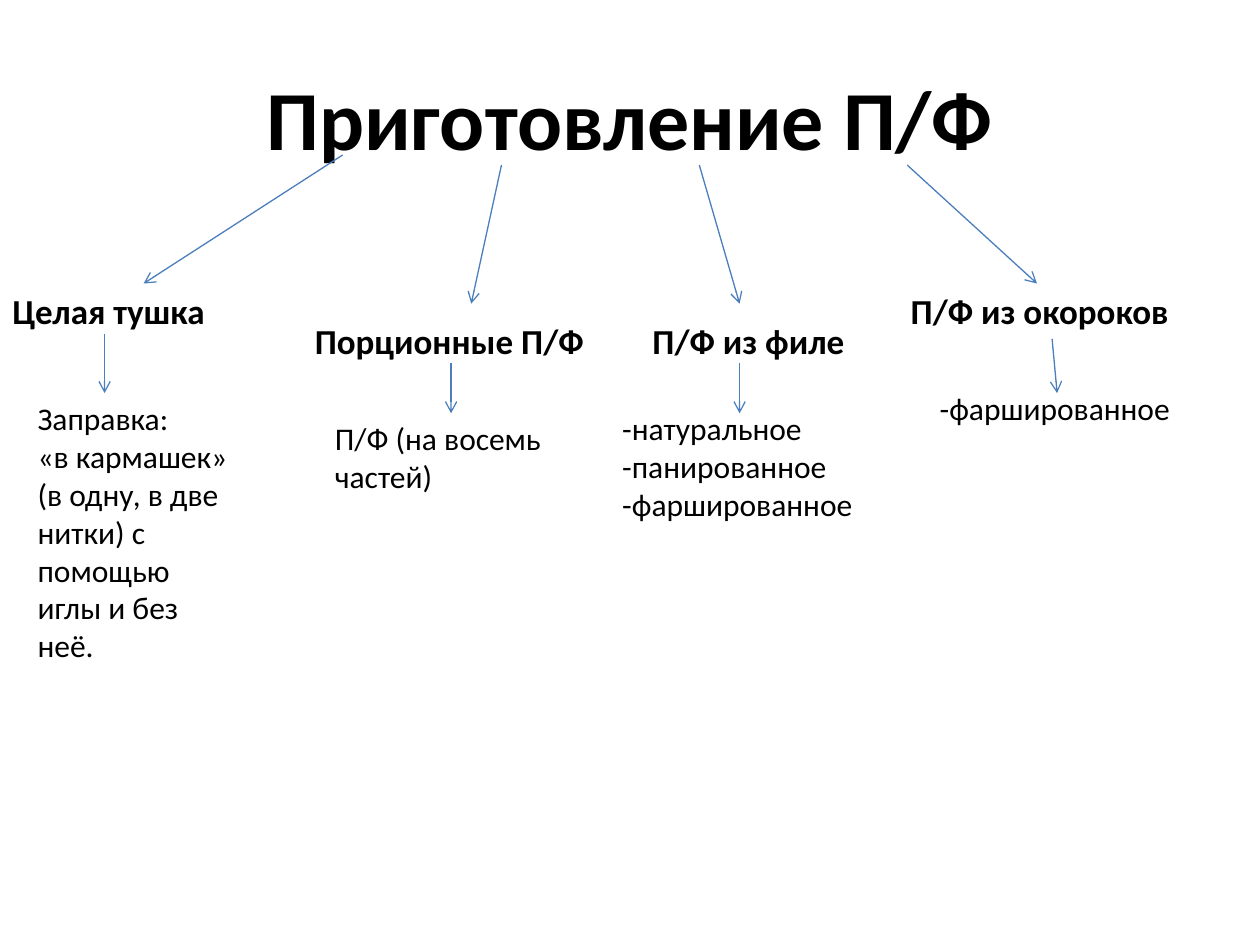
from lxml import etree
from pptx import Presentation
from pptx.dml.color import RGBColor
from pptx.enum import shapes, text
from pptx.oxml import ns
from pptx.util import Inches, Pt

COLORS = {"ink": "000000", "arrow": "4B7EBC"}
FONT = "Calibri"

# head: left, top, width, height; the rest is measured from its left top corner:
# feed = arrow from the title, drop = arrow to the list, body = list box
BRANCHES = [
    dict(head=(0, 2.25, 1.89, 0.44), name="Целая тушка",
         feed=(2.72, -1.02, 1.14, 0), drop=(0.83, 0.4, 0.83, 0.87),
         body=(0.2, 0.87, 1.73, 2.22),
         items=["Заправка:", "«в кармашек»",
                "(в одну, в две нитки) с помощью иглы и без неё."]),
    dict(head=(2.4, 2.49, 2.36, 0.44), name="Порционные П/Ф",
         feed=(1.58, -1.18, 1.34, -0.08), drop=(1.18, 0.39, 1.18, 0.79),
         body=(0.16, 0.79, 1.97, 0.71), items=["П/Ф (на восемь частей)"]),
    dict(head=(5.08, 2.49, 1.89, 0.44), name="П/Ф из филе",
         feed=(0.47, -1.18, 0.79, -0.08), drop=(0.79, 0.39, 0.79, 0.79),
         body=(-0.24, 0.71, 2.2, 1.01),
         items=["-натуральное", "-панированное", "-фаршированное"]),
    dict(head=(7.13, 2.25, 2.44, 0.44), name="П/Ф из окороков",
         feed=(0.07, -0.94, 1.1, 0), drop=(1.22, 0.44, 1.26, 0.87),
         body=(0.23, 0.79, 2.2, 0.4), items=["-фаршированное"]),
]


def add_text(slide, box, lines, size, bold=False):
    frame = slide.shapes.add_textbox(*map(Inches, box)).text_frame
    frame.word_wrap = True
    frame.text = "\n".join(lines)
    for par in frame.paragraphs:
        for run in par.runs:
            run.font.name = FONT
            run.font.size = Pt(size)
            run.font.bold = bold
            run.font.color.rgb = RGBColor.from_string(COLORS["ink"])
    return frame


def add_arrow(slide, ends):
    line = slide.shapes.add_connector(
        shapes.MSO_CONNECTOR.STRAIGHT, *map(Inches, ends))
    line.line.color.rgb = RGBColor.from_string(COLORS["arrow"])
    line.line.width = Pt(0.75)
    etree.SubElement(line.line._get_or_add_ln(), ns.qn("a:tailEnd"), type="arrow")
    etree.SubElement(line._element.spPr, ns.qn("a:effectLst"))


def add_title(slide, box):
    frame = add_text(slide, box, ["Приготовление П/Ф"], 48, True)
    frame.vertical_anchor = text.MSO_ANCHOR.MIDDLE
    frame.paragraphs[0].alignment = text.PP_ALIGN.CENTER


def add_branch(slide, box, name, feed, drop, body, items):
    """Place a heading with its arrow from the title and the list below it."""
    left, top, *_ = box
    add_text(slide, box, [name], 20, True)
    for x1, y1, x2, y2 in (feed, drop):
        add_arrow(slide, (left + x1, top + y1, left + x2, top + y2))
    x, y, width, height = body
    add_text(slide, (left + x, top + y, width, height), items, 18)


def main():
    deck = Presentation()
    deck.slide_width, deck.slide_height = Inches(10), Inches(7.5)
    slide = deck.slides.add_slide(deck.slide_layouts[6])
    add_title(slide, (0.5, 0.3, 9, 1.25))
    for branch in BRANCHES:
        parts = dict(branch)
        add_branch(slide, parts.pop("head"), **parts)
    deck.save("out.pptx")


if __name__ == "__main__":
    main()
